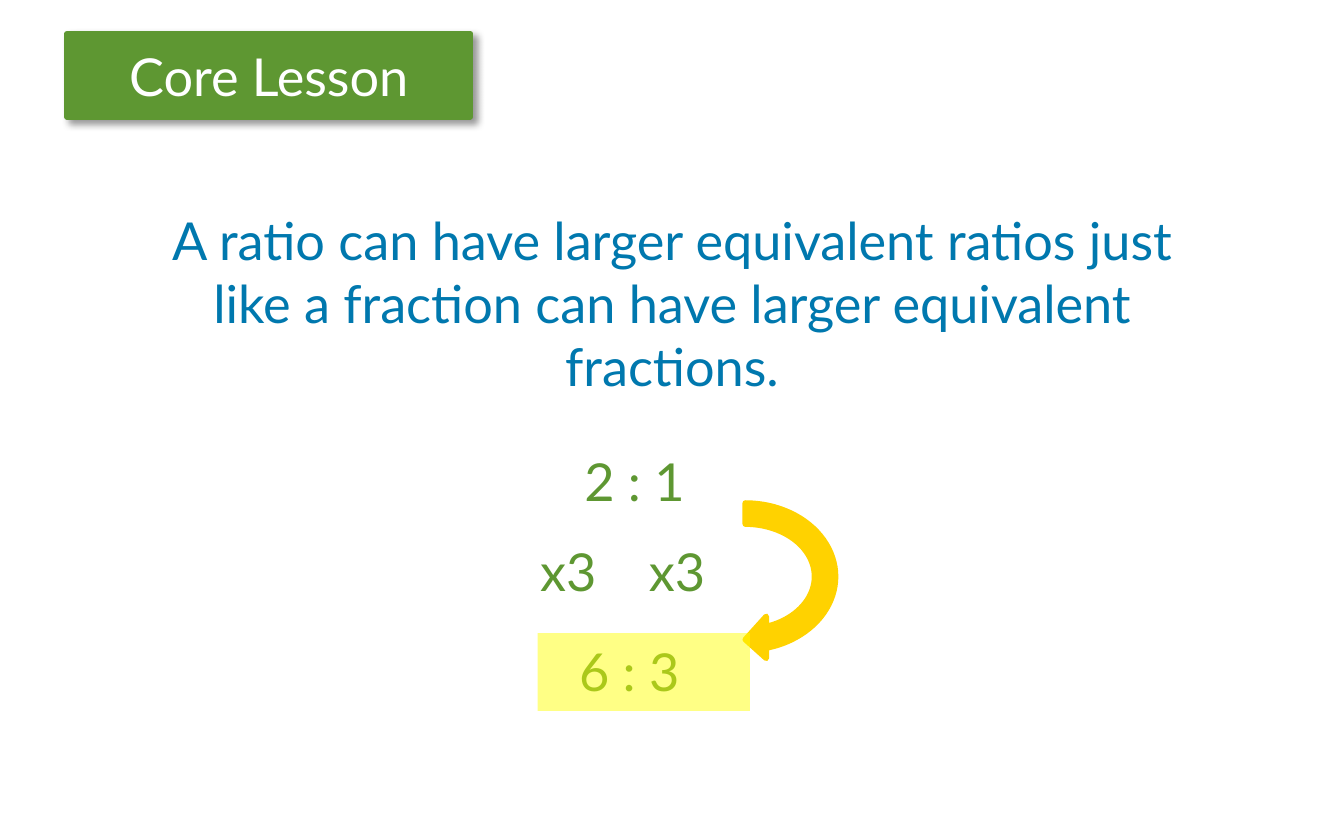
from dataclasses import dataclass

from lxml.etree import SubElement
from pptx import Presentation
from pptx.dml.color import RGBColor
from pptx.enum.shapes import MSO_SHAPE as Shape
from pptx.enum.text import MSO_ANCHOR as Anchor, PP_ALIGN as Align
from pptx.oxml.ns import qn
from pptx.util import Inches, Pt


@dataclass(frozen=True)
class Theme:
    font: str = "Lato"
    size: int = 28
    green: str = "5E9732"
    blue: str = "0078AE"
    gold: str = "FFD200"
    yellow: str = "FFFF00"
    white: str = "FFFFFF"
    outline: int = 3


THEME = Theme()


def write(frame, text, color=THEME.green, align=Align.LEFT, anchor=Anchor.TOP, tab=None):
    frame.word_wrap = True
    frame.vertical_anchor = anchor
    para = frame.paragraphs[0]
    para.alignment = align
    if tab is not None:
        stops = SubElement(para._p.get_or_add_pPr(), qn("a:tabLst"))
        SubElement(stops, qn("a:tab"), pos=str(Inches(tab)), algn="l")
    span = para.add_run()
    span.text = text
    span.font.name = THEME.font
    span.font.size = Pt(THEME.size)
    span.font.color.rgb = RGBColor.from_string(color)


def add_text(page, area, text, **style):
    box = page.shapes.add_textbox(*map(Inches, area))
    write(box.text_frame, text, **style)


def add_block(page, kind, area, fill, outlined=True):
    block = page.shapes.add_shape(kind, *map(Inches, area))
    block.shadow.inherit = False
    block.fill.solid()
    block.fill.fore_color.rgb = RGBColor.from_string(fill)
    if outlined:
        block.line.color.rgb = RGBColor.from_string(fill)
        block.line.width = Pt(THEME.outline)
    else:
        block.line.fill.background()
    return block


def add_shadow(block):
    effects = block._element.spPr.find(qn("a:effectLst"))
    shadow = SubElement(effects, qn("a:outerShdw"), blurRad=str(Pt(4)), dist=str(Pt(3)),
                        dir=str(45 * 60000), algn="tl", rotWithShape="0")
    tint = SubElement(shadow, qn("a:srgbClr"), val="000000")
    SubElement(tint, qn("a:alpha"), val="40000")


def set_opacity(block, percent):
    tint = block._element.spPr.find(qn("a:solidFill"))[0]
    SubElement(tint, qn("a:alpha"), val=str(percent * 1000))


def main():
    deck = Presentation()
    deck.slide_width, deck.slide_height = Inches(10), Inches(6.25)
    page = deck.slides.add_slide(deck.slide_layouts[6])

    banner = add_block(page, Shape.RECTANGLE, (0.5, 0.25, 3, 0.62), THEME.green)
    add_shadow(banner)
    write(banner.text_frame, "Core Lesson", color=THEME.white,
          align=Align.CENTER, anchor=Anchor.MIDDLE)

    add_text(page, (1, 1.5, 8, 0.75),
             "A ratio can have larger equivalent ratios just like a fraction "
             "can have larger equivalent fractions.",
             color=THEME.blue, align=Align.CENTER)

    add_text(page, (4.25, 3.29, 1.04, 0.75), "2 : 1")
    add_text(page, (3.92, 3.96, 1.79, 0.75), "x3\tx3", tab=0.81)
    add_text(page, (4.21, 4.71, 1.38, 0.75), "6 : 3")

    arrow = add_block(page, Shape.CIRCULAR_ARROW, (4.92, 3.54, 1.25, 1.5), THEME.gold)
    arrow.rotation = 90

    highlight = add_block(page, Shape.RECTANGLE, (4, 4.71, 1.58, 0.58),
                          THEME.yellow, outlined=False)
    set_opacity(highlight, 48)

    deck.save("out.pptx")


if __name__ == "__main__":
    main()
